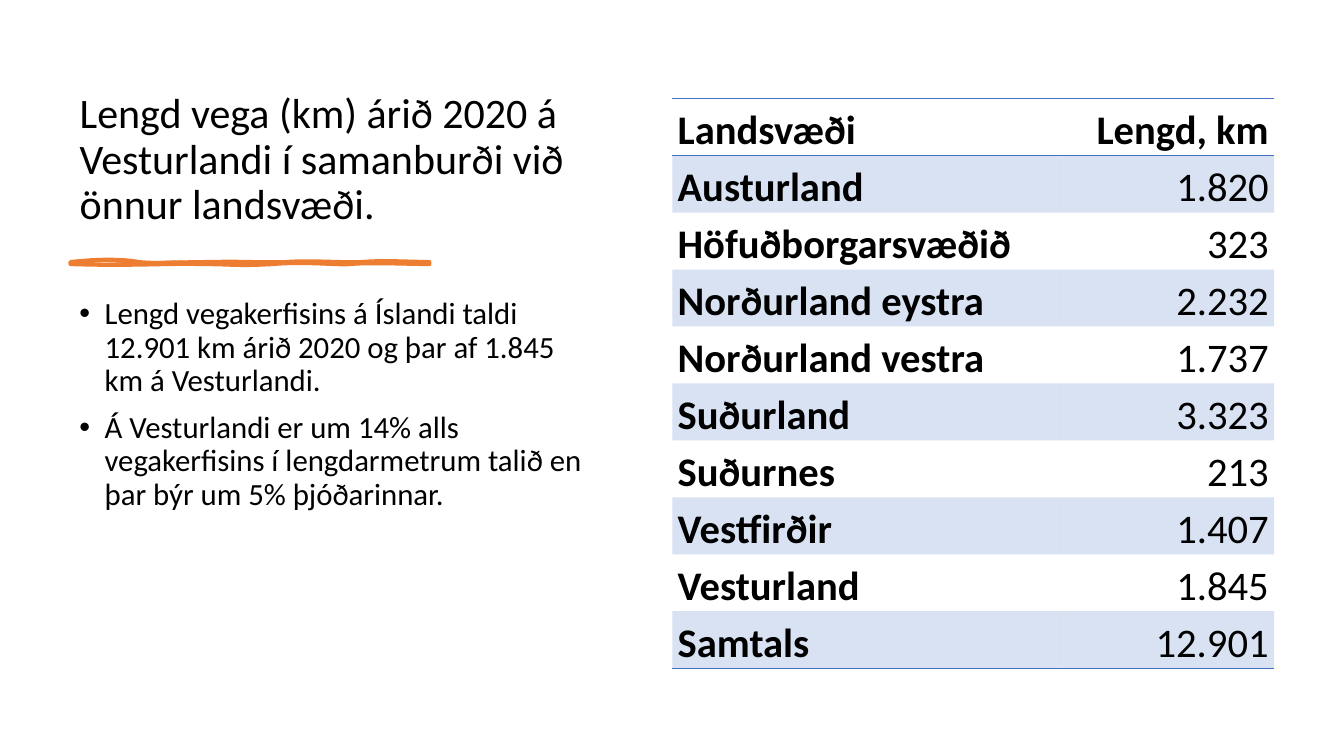
from lxml.etree import SubElement
from pptx import Presentation
from pptx.dml.color import RGBColor
from pptx.enum.text import MSO_ANCHOR as Anchor, MSO_AUTO_SIZE as AutoSize, PP_ALIGN as Align
from pptx.oxml import parse_xml
from pptx.oxml.ns import nsdecls, qn
from pptx.util import Pt

BLACK = RGBColor(0x00, 0x00, 0x00)
ORANGE = RGBColor(0xED, 0x7D, 0x31)
BLUE = RGBColor(0x44, 0x72, 0xC4)
NO_STYLE = "{2D5ABB26-0587-4C30-8999-92F81FD0307C}"

HEADLINE = "Lengd vega (km) árið 2020 á Vesturlandi í samanburði við önnur landsvæði."
FACTS = [
    "Lengd vegakerfisins á Íslandi taldi 12.901 km árið 2020 og þar af 1.845 km á Vesturlandi.",
    "Á Vesturlandi er um 14% alls vegakerfisins í lengdarmetrum talið en þar býr um 5% þjóðarinnar.",
]
ROAD_LENGTHS = [
    ("Landsvæði", "Lengd, km"),
    ("Austurland", "1.820"),
    ("Höfuðborgarsvæðið", "323"),
    ("Norðurland eystra", "2.232"),
    ("Norðurland vestra", "1.737"),
    ("Suðurland", "3.323"),
    ("Suðurnes", "213"),
    ("Vestfirðir", "1.407"),
    ("Vesturland", "1.845"),
    ("Samtals", "12.901"),
]

STROKE_START = (50.4, 187.2)
STROKE_EDGE = [
    [(69.8, 185), (87.1, 185), (99.4, 187.2)],
    [(111.6, 188.6), (127.4, 187.2), (150.5, 187.2)],
    [(173.5, 186.5), (187.2, 187.9), (204.5, 187.2)],
    [(221.8, 185.8), (244.1, 187.9), (258.5, 187.2)],
    [(272.9, 185.8), (296.6, 187.2), (306.7, 187.2)],
    [(306.7, 187.2), (306.7, 187.9), (306.7, 188.6)],
    [(293.8, 188.6), (262.1, 187.2), (250.6, 188.6)],
    [(239.8, 189.4), (218.9, 186.5), (194.4, 188.6)],
    [(169.2, 190.1), (166.3, 188.6), (143.3, 188.6)],
    [(119.5, 187.9), (95, 190.1), (50.4, 188.6)],
    [(50.4, 187.9), (50.4, 187.2), (50.4, 187.2)],
]
STROKE_BODY = [
    [(73.4, 188.6), (79.2, 187.2), (99.4, 187.2)],
    [(119.5, 186.5), (121.7, 185), (143.3, 187.2)],
    [(164.2, 188.6), (187.9, 187.9), (199.4, 187.2)],
    [(211, 185.8), (235.4, 188.6), (247.7, 187.2)],
    [(260.6, 185), (285.8, 189.4), (306.7, 187.2)],
    [(306.7, 187.2), (306.7, 187.9), (306.7, 188.6)],
    [(296.6, 187.9), (267.8, 190.1), (255.6, 188.6)],
    [(244.8, 186.5), (222.5, 188.6), (199.4, 188.6)],
    [(175.7, 188.6), (172.8, 187.2), (155.5, 188.6)],
    [(139, 189.4), (128.9, 187.9), (104.4, 188.6)],
    [(79.9, 188.6), (66.2, 187.9), (50.4, 188.6)],
    [(50.4, 187.9), (50.4, 187.2), (50.4, 187.2)],
]


def write(paragraph, text, font="Calibri", size=22, bold=False, color=BLACK,
          align=Align.LEFT, spacing=0.9, before=0, after=0, bullet=False):
    paragraph.alignment = align
    paragraph.line_spacing = spacing
    paragraph.space_before = Pt(before)
    paragraph.space_after = Pt(after)
    run = paragraph.add_run()
    run.text = text
    run.font.name = font
    run.font.size = Pt(size)
    run.font.bold = bold
    run.font.color.rgb = color
    if bullet:
        properties = paragraph._p.get_or_add_pPr()
        properties.set("marL", str(Pt(18)))
        properties.set("indent", str(-Pt(18)))
        SubElement(properties, qn("a:buFont")).set("typeface", "Arial")
        SubElement(properties, qn("a:buChar")).set("char", "•")


class RoadSlide:
    def __init__(self, deck):
        self.slide = deck.slides.add_slide(deck.slide_layouts[5])
        self.shapes = self.slide.shapes

    def title(self, text, left, top, width, height):
        headline = self.shapes.title
        headline.left, headline.top = Pt(left), Pt(top)
        headline.width, headline.height = Pt(width), Pt(height)
        frame = headline.text_frame
        frame.word_wrap = True
        frame.auto_size = AutoSize.NONE
        frame.vertical_anchor = Anchor.BOTTOM
        write(frame.paragraphs[0], text, size=30)

    def bullets(self, texts, left, top, width, height):
        frame = self.shapes.add_textbox(Pt(left), Pt(top), Pt(width), Pt(height)).text_frame
        frame.word_wrap = True
        for index, text in enumerate(texts):
            paragraph = frame.add_paragraph() if index else frame.paragraphs[0]
            write(paragraph, text, before=10, bullet=True)

    def brush(self, start, edge, body):
        builder = self.shapes.build_freeform(Pt(start[0]), Pt(start[1]))
        builder.add_line_segments([(Pt(x), Pt(y)) for _, _, (x, y) in edge])
        stroke = builder.convert_to_shape()
        stroke.shadow.inherit = False
        stroke.fill.solid()
        stroke.fill.fore_color.rgb = ORANGE
        stroke.line.color.rgb = ORANGE
        stroke.line.width = Pt(3)
        outlines = stroke._element.spPr.find(".//" + qn("a:pathLst"))
        outlines.remove(outlines[0])
        for curves, option, value in ((edge, "fill", "none"), (body, "stroke", "0")):
            outline = SubElement(outlines, qn("a:path"))
            outline.set("w", str(stroke.width))
            outline.set("h", str(stroke.height))
            outline.set(option, value)
            for command, points in [("moveTo", [start])] + [("cubicBezTo", c) for c in curves]:
                segment = SubElement(outline, qn("a:" + command))
                for x, y in points:
                    point = SubElement(segment, qn("a:pt"))
                    point.set("x", str(Pt(x) - stroke.left))
                    point.set("y", str(Pt(y) - stroke.top))
            SubElement(outline, qn("a:close"))

    def table(self, rows, left, top, widths, row_height):
        frame = self.shapes.add_table(len(rows), len(widths), Pt(left), Pt(top),
                                      Pt(sum(widths)), Pt(row_height * len(rows)))
        grid = frame.table
        grid.first_row = grid.horz_banding = False
        grid._tbl.tblPr.find(qn("a:tableStyleId")).text = NO_STYLE
        for column, width in zip(grid.columns, widths):
            column.width = Pt(width)
        last = len(rows) - 1
        for r, values in enumerate(rows):
            grid.rows[r].height = Pt(row_height)
            sides = {0: ("lnT", "lnB"), last: ("lnB",)}.get(r, ())
            for c, value in enumerate(values):
                cell = grid.cell(r, c)
                cell.margin_left = cell.margin_right = Pt(3.75)
                cell.margin_top = cell.margin_bottom = 0
                cell.vertical_anchor = Anchor.TOP if r else Anchor.BOTTOM
                write(cell.text_frame.paragraphs[0], value, size=29,
                      bold=r == 0 or c == 0, spacing=1.15, after=10,
                      align=Align.RIGHT if c else Align.JUSTIFY)
                self.shade(cell, r % 2 == 1)
                self.borders(cell, sides)

    def shade(self, cell, banded):
        if not banded:
            cell.fill.background()
            return
        cell.fill.solid()
        cell.fill.fore_color.rgb = BLUE
        tint = cell._tc.tcPr.find(".//" + qn("a:srgbClr"))
        SubElement(tint, qn("a:alpha")).set("val", "20000")

    def borders(self, cell, sides):
        for position, side in enumerate(sides):
            cell._tc.tcPr.insert(position, parse_xml(
                f'<a:{side} {nsdecls("a")} w="{Pt(1)}"><a:solidFill>'
                f'<a:srgbClr val="{BLUE}"/></a:solidFill></a:{side}>'))


def main():
    deck = Presentation()
    deck.slide_width, deck.slide_height = Pt(960), Pt(540)
    roads = RoadSlide(deck)
    roads.title(HEADLINE, 49.68, 50.4, 379.44, 116.64)
    roads.brush(STROKE_START, STROKE_EDGE, STROKE_BODY)
    roads.bullets(FACTS, 49.68, 209.52, 379.44, 279.36)
    roads.table(ROAD_LENGTHS, 480.3, 70.5, (274.32, 155.52), 40.7)
    deck.save("out.pptx")


if __name__ == "__main__":
    main()
